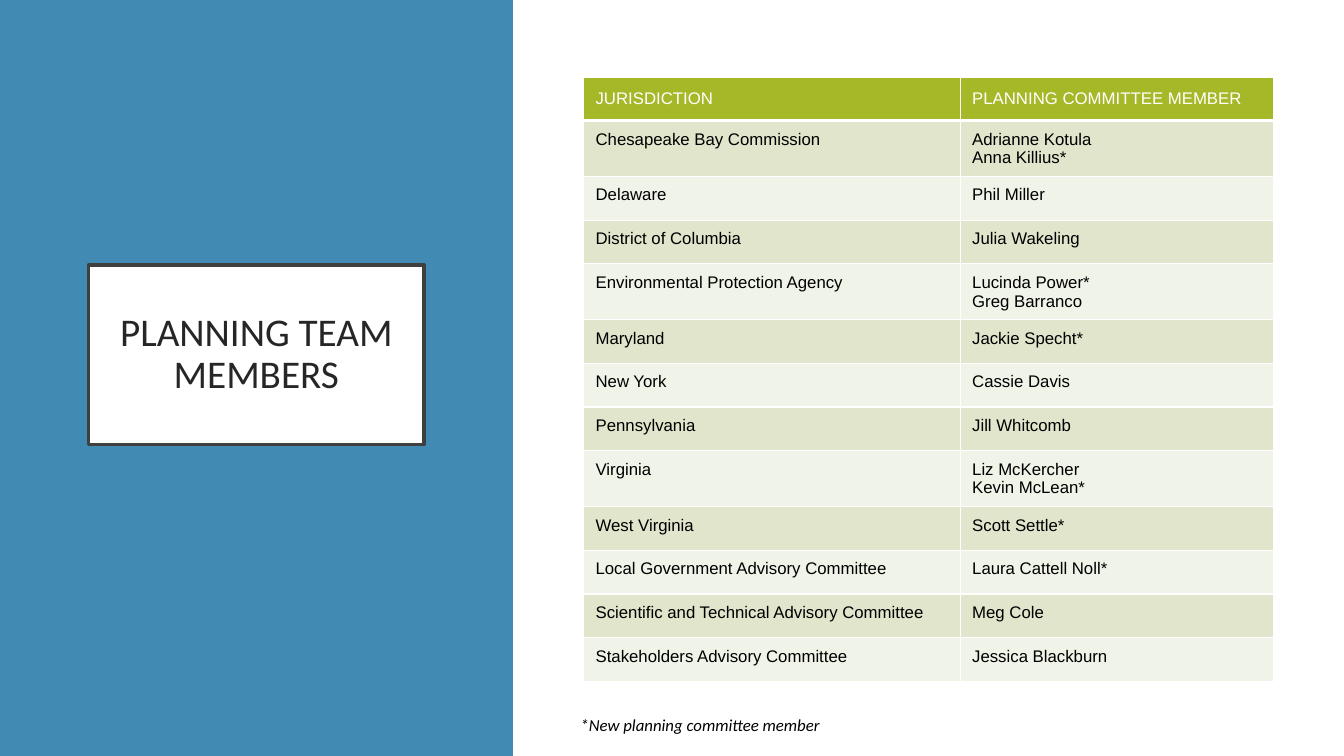
from lxml import etree
from pptx import Presentation
from pptx import util as u
from pptx.dml.color import RGBColor
from pptx.enum import shapes, text
from pptx.oxml import ns

BLUE = RGBColor(0x41, 0x8A, 0xB3)
WHITE = RGBColor(0xFF, 0xFF, 0xFF)
BLACK = RGBColor(0, 0, 0)
FRAME = RGBColor(0x3F, 0x3F, 0x3F)
TITLE = RGBColor(0x26, 0x26, 0x26)
GREEN = RGBColor(0xA6, 0xB7, 0x27)
BAND_DARK = RGBColor(0xE0, 0xE5, 0xCB)
BAND_LIGHT = RGBColor(0xF0, 0xF3, 0xE7)

HEADER = ("JURISDICTION", ["PLANNING COMMITTEE MEMBER"])
MEMBERS = [
    ("Chesapeake Bay Commission", ["Adrianne Kotula", "Anna Killius*"]),
    ("Delaware", ["Phil Miller"]),
    ("District of Columbia", ["Julia Wakeling"]),
    ("Environmental Protection Agency", ["Lucinda Power*", "Greg Barranco"]),
    ("Maryland", ["Jackie Specht*"]),
    ("New York", ["Cassie Davis"]),
    ("Pennsylvania", ["Jill Whitcomb"]),
    ("Virginia", ["Liz McKercher", "Kevin McLean*"]),
    ("West Virginia", ["Scott Settle*"]),
    ("Local Government Advisory Committee", ["Laura Cattell Noll*"]),
    ("Scientific and Technical Advisory Committee", ["Meg Cole"]),
    ("Stakeholders Advisory Committee", ["Jessica Blackburn"]),
]
COL_WIDTHS = (9.49, 7.89)
ROW_HEIGHT = 1.1


def add_run(p, words, size, font, color, italic=False):
    r = p.add_run()
    r.text = words
    r.font.size = u.Pt(size)
    r.font.name = font
    r.font.color.rgb = color
    r.font.italic = italic


def add_rect(slide, left, top, width, height, line=None):
    sp = slide.shapes.add_shape(shapes.MSO_SHAPE.RECTANGLE, u.Cm(left),
                                u.Cm(top), u.Cm(width), u.Cm(height))
    sp.shadow.inherit = False
    sp.fill.solid()
    sp.fill.fore_color.rgb = WHITE
    if line is None:
        sp.line.fill.background()
    else:
        sp.line.color.rgb = line
        sp.line.width = u.Pt(2.5)
    return sp


def add_title(slide, words):
    tf = add_rect(slide, 2.23, 6.68, 8.46, 4.52, FRAME).text_frame
    tf.word_wrap = True
    tf.vertical_anchor = text.MSO_ANCHOR.MIDDLE
    tf.margin_left = tf.margin_right = u.Cm(0.76)
    tf.margin_top = tf.margin_bottom = u.Cm(0.51)
    p = tf.paragraphs[0]
    p.alignment = text.PP_ALIGN.CENTER
    p.line_spacing = 0.9
    add_run(p, words, 28, "Calibri", TITLE)


def set_borders(cell, widths):
    tcPr = cell._tc.get_or_add_tcPr()
    for side, width in widths.items():
        ln = etree.SubElement(tcPr, ns.qn(f"a:ln{side}"), w=str(u.Pt(width)))
        fill = etree.SubElement(ln, ns.qn("a:solidFill"))
        etree.SubElement(fill, ns.qn("a:srgbClr"), val=str(WHITE))


def fill_cell(cell, lines, color, fill, widths):
    set_borders(cell, widths)
    cell.fill.solid()
    cell.fill.fore_color.rgb = fill
    cell.margin_left = u.Cm(0.3)
    cell.margin_right = cell.margin_top = cell.margin_bottom = u.Cm(0.23)
    tf = cell.text_frame
    for i, line in enumerate(lines):
        p = tf.add_paragraph() if i else tf.paragraphs[0]
        add_run(p, line, 12, "Arial", color)


def add_members_table(slide):
    rows = [HEADER] + MEMBERS
    table = slide.shapes.add_table(
        len(rows), 2, u.Cm(14.71), u.Cm(1.94),
        u.Cm(sum(COL_WIDTHS)), u.Cm(ROW_HEIGHT * len(rows))).table
    for column, width in zip(table.columns, COL_WIDTHS):
        column.width = u.Cm(width)
    for i, (jurisdiction, names) in enumerate(rows):
        table.rows[i].height = u.Cm(ROW_HEIGHT)
        color, fill = BLACK, BAND_DARK if i % 2 else BAND_LIGHT
        if i == 0:
            color, fill = WHITE, GREEN
        widths = {"L": 1, "R": 1, "T": 3 if i == 1 else 1,
                  "B": 3 if i == 0 else 1}
        for j, lines in enumerate(([jurisdiction], names)):
            fill_cell(table.cell(i, j), lines, color, fill, widths)
    for cell in table.rows[0].cells:
        cell.vertical_anchor = text.MSO_ANCHOR.MIDDLE


def add_footnote(slide, words):
    sp = slide.shapes.add_textbox(u.Cm(14.38), u.Cm(17.88), u.Cm(17.07), u.Cm(0.76))
    tf = sp.text_frame
    tf.word_wrap = True
    add_run(tf.paragraphs[0], words, 12, "Calibri", BLACK, italic=True)


def main():
    prs = Presentation()
    prs.slide_width, prs.slide_height = u.Cm(33.87), u.Cm(19.05)
    slide = prs.slides.add_slide(prs.slide_layouts[6])
    slide.background.fill.solid()
    slide.background.fill.fore_color.rgb = BLUE
    add_title(slide, "PLANNING TEAM MEMBERS")
    add_rect(slide, 12.93, 0, 20.94, 19.05)
    add_members_table(slide)
    add_footnote(slide, "*New planning committee member")
    prs.save("out.pptx")


if __name__ == "__main__":
    main()
